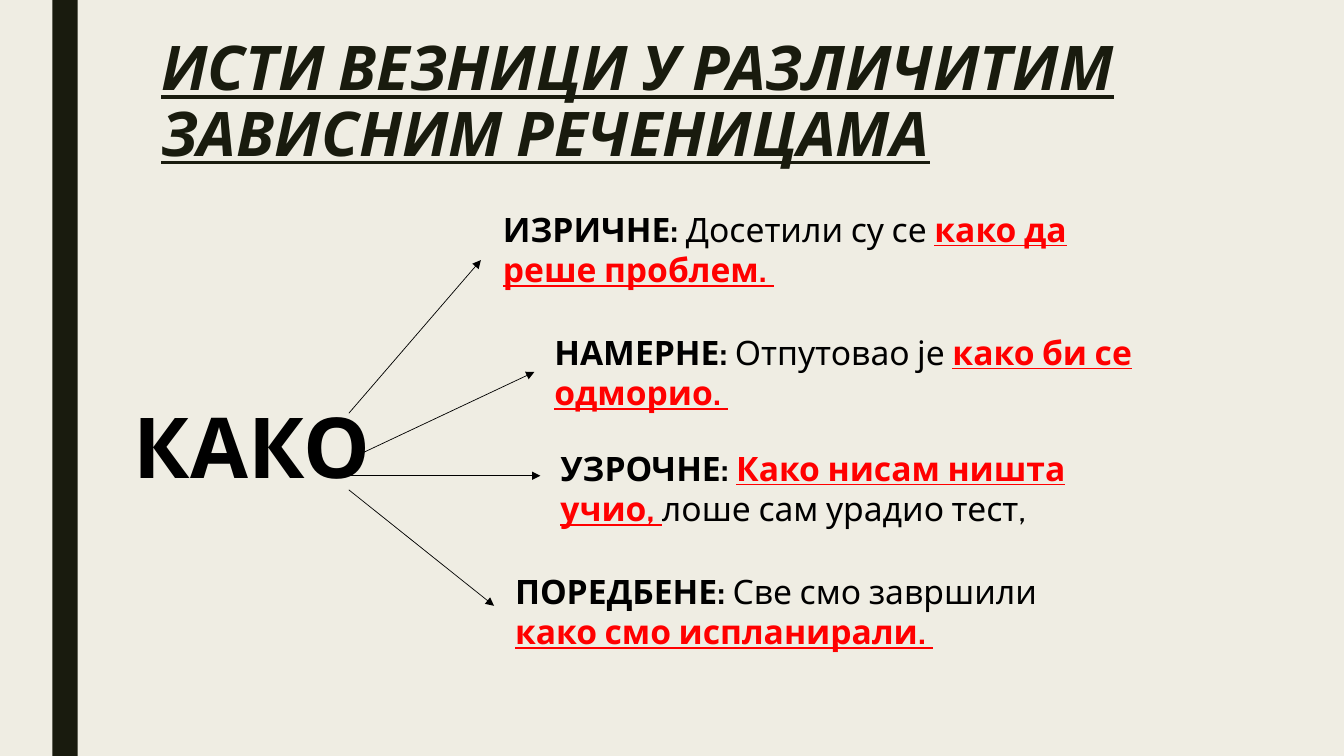
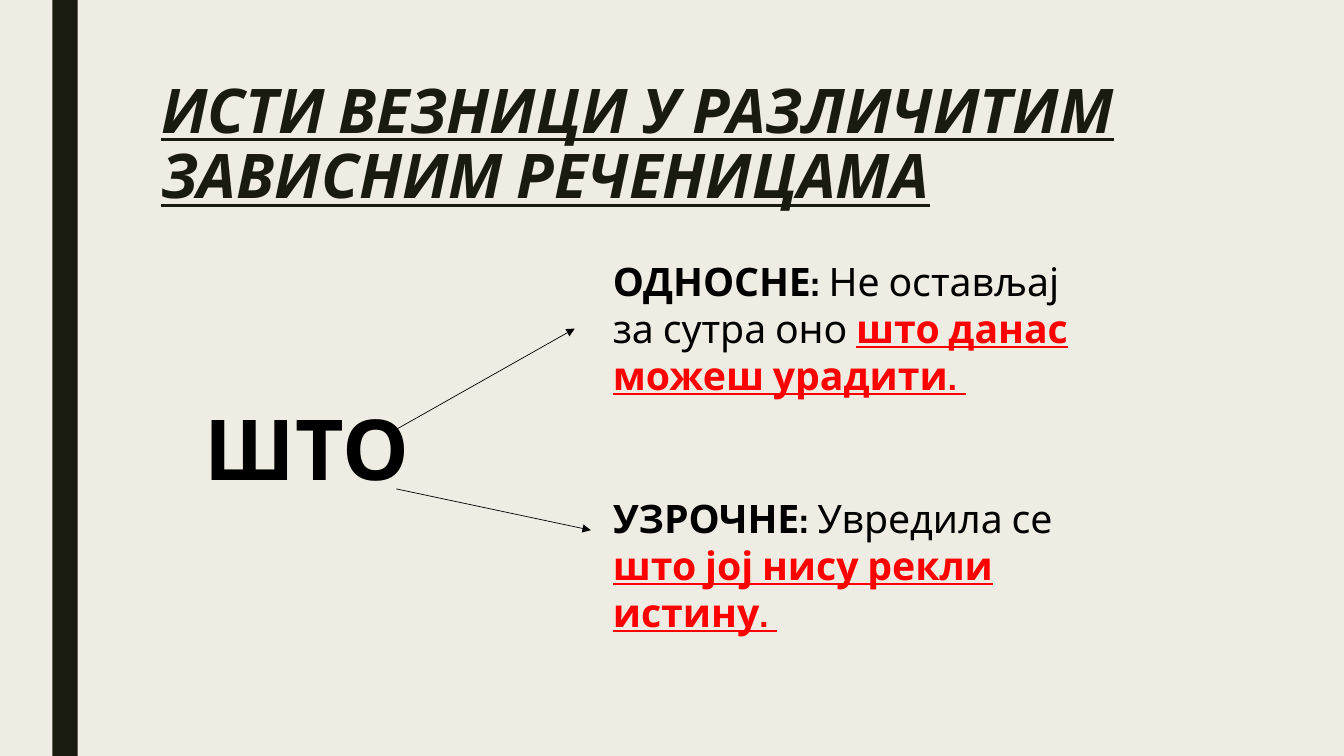
import pptx
import pptx.util
import pptx.dml.color
import pptx.enum.shapes
import pptx.enum.text
import pptx.oxml.ns
import lxml.etree

Inches = pptx.util.Inches
Pt = pptx.util.Pt
RGBColor = pptx.dml.color.RGBColor

CREAM = RGBColor(0xEF, 0xED, 0xE3)
DARK = RGBColor(0x19, 0x1B, 0x0E)
BLACK = RGBColor(0, 0, 0)
RED = RGBColor(0xFF, 0, 0)
FONT = "Cabin"
TITLE = "ИСТИ ВЕЗНИЦИ У РАЗЛИЧИТИМ ЗАВИСНИМ РЕЧЕНИЦАМА"

LABEL, PLAIN, CLAUSE = "label", "plain", "clause"

LESSONS = [
    {
        "title_top": 0.33,
        "conjunction": ("КАКО", (1.23, 3.86, 2.93, 1.11)),
        "size": 24,
        "arrows": [
            ((3.46, 4.1), (4.77, 2.58)),
            ((3.56, 4.51), (5.3, 3.69)),
            ((3.46, 4.72), (5.36, 4.72)),
            ((3.46, 4.86), (4.9, 6.01)),
        ],
        "examples": [
            ((4.89, 2.02, 5.96, 0.91),
             [("ИЗРИЧНЕ: ", LABEL), ("Досетили су се ", PLAIN),
              ("како да реше проблем. ", CLAUSE)]),
            ((5.4, 3.24, 6.4, 0.91),
             [("НАМЕРНЕ: ", LABEL), ("Отпутовао је ", PLAIN),
              ("како би се одморио. ", CLAUSE)]),
            ((5.46, 4.39, 6.16, 0.91),
             [("УЗРОЧНЕ: ", LABEL), ("Како нисам ништа учио, ", CLAUSE),
              ("лоше сам урадио тест,", PLAIN)]),
            ((5.01, 5.61, 6.04, 0.91),
             [("ПОРЕДБЕНЕ: ", LABEL), ("Све смо завршили ", PLAIN),
              ("како смо испланирали. ", CLAUSE)]),
        ],
    },
    {
        "title_top": 0.75,
        "conjunction": ("ШТО", (1.93, 3.88, 2.52, 1.11)),
        "size": 28,
        "arrows": [
            ((3.93, 4.26), (5.7, 3.26)),
            ((3.93, 4.85), (5.86, 5.26)),
        ],
        "examples": [
            ((5.98, 2.5, 5.06, 1.51),
             [("ОДНОСНЕ: ", LABEL), ("Не остављај за сутра оно ", PLAIN),
              ("што данас можеш урадити. ", CLAUSE)]),
            ((5.98, 4.85, 4.95, 1.51),
             [("УЗРОЧНЕ: ", LABEL), ("Увредила се ", PLAIN),
              ("што јој нису рекли истину. ", CLAUSE)]),
        ],
    },
]


def add_text(slide, box, spans, size, color=BLACK):
    frame = slide.shapes.add_textbox(*map(Inches, box)).text_frame
    frame.word_wrap = True
    frame.vertical_anchor = pptx.enum.text.MSO_ANCHOR.TOP
    paragraph = frame.paragraphs[0]
    paragraph.font.name = FONT
    paragraph.font.size = Pt(size)
    paragraph.font.color.rgb = color
    for text, style in spans:
        run = paragraph.add_run()
        run.text = text
        run.font.name = FONT
        run.font.size = Pt(size)
        run.font.bold = style != PLAIN
        run.font.underline = style == CLAUSE
        run.font.color.rgb = RED if style == CLAUSE else color
    return paragraph


def add_title(slide, top):
    paragraph = add_text(slide, (1.5, top, 10.5, 1.62), [(TITLE, LABEL)], 44, DARK)
    paragraph.line_spacing = 0.89
    font = paragraph.runs[0].font
    font.italic = True
    font.underline = True


def add_arrow(slide, start, end):
    arrow = slide.shapes.add_connector(
        pptx.enum.shapes.MSO_CONNECTOR.STRAIGHT, *map(Inches, start + end))
    arrow.line.color.rgb = BLACK
    arrow.line.width = Pt(0.5)
    qn = pptx.oxml.ns.qn
    properties = arrow.line._get_or_add_ln()
    lxml.etree.SubElement(properties, qn("a:tailEnd"), type="triangle")
    lxml.etree.SubElement(arrow._element.spPr, qn("a:effectLst"))


def add_band(slide):
    band = slide.shapes.add_shape(
        pptx.enum.shapes.MSO_SHAPE.RECTANGLE,
        Inches(0.52), Inches(0), Inches(0.25), Inches(7.5))
    band.shadow.inherit = False
    band.fill.solid()
    band.fill.fore_color.rgb = DARK
    band.line.fill.background()


def add_lesson(deck, lesson):
    slide = deck.slides.add_slide(deck.slide_layouts[6])
    slide.background.fill.solid()
    slide.background.fill.fore_color.rgb = CREAM
    add_band(slide)
    add_title(slide, lesson["title_top"])
    word, box = lesson["conjunction"]
    add_text(slide, box, [(word, LABEL)], 60)
    for start, end in lesson["arrows"]:
        add_arrow(slide, start, end)
    for box, spans in lesson["examples"]:
        add_text(slide, box, spans, lesson["size"])


def main():
    deck = pptx.Presentation()
    deck.slide_width = Inches(13.33)
    deck.slide_height = Inches(7.5)
    for lesson in LESSONS:
        add_lesson(deck, lesson)
    deck.save("out.pptx")


if __name__ == "__main__":
    main()
